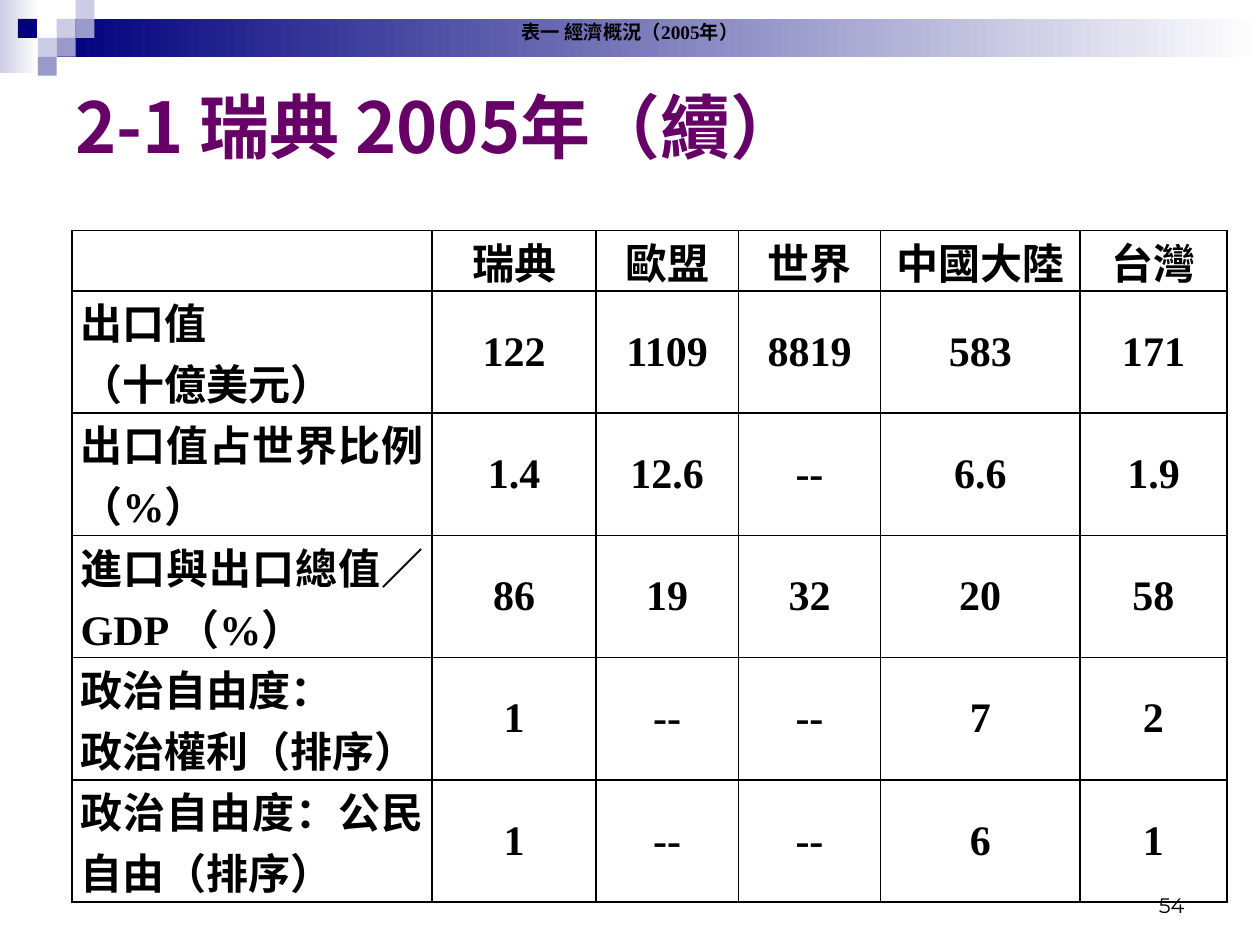
"""Build the slide on Sweden's 2005 economic profile."""
import dataclasses
import typing

import lxml.etree
import pptx
import pptx.dml.color
import pptx.enum.shapes
import pptx.enum.text
import pptx.oxml.ns
import pptx.util

ALIGN = pptx.enum.text.PP_ALIGN
ANCHOR = pptx.enum.text.MSO_ANCHOR
WIDTH, HEIGHT, UNIT = 10, 7.5, 0.15
HAN_FONT, LATIN_FONT, NUMBER_FONT = "Noto Sans CJK TC", "Times New Roman", "Montserrat"
NAVY, LILAC, PERIWINKLE, WHITE, BLACK, PURPLE = (
    "00007D", "CCCCE6", "9999CC", "FFFFFF", "000000", "660066")
COLUMN_WIDTHS = (2.86, 1.3, 1.13, 1.13, 1.58, 1.17)
HEADER_HEIGHT, ROW_HEIGHT = 0.48, 0.97
TABLE_ROWS = (
    ("", "瑞典", "歐盟", "世界", "中國大陸", "台灣"),
    ("出口值\n（十億美元）", "122", "1109", "8819", "583", "171"),
    ("出口值占世界比例（%）", "1.4", "12.6", "--", "6.6", "1.9"),
    ("進口與出口總值／GDP （%）", "86", "19", "32", "20", "58"),
    ("政治自由度：\n政治權利（排序）", "1", "--", "--", "7", "2"),
    ("政治自由度：公民自由（排序）", "1", "--", "--", "6", "1"),
)


@dataclasses.dataclass(frozen=True)
class Block:
    """A decorative rectangle in grid units, with one colour or a fade."""
    column: float
    row: float
    columns: float
    rows: float
    colors: tuple[str, ...]


@dataclasses.dataclass(frozen=True)
class Style:
    """The look of a run of text and of its paragraph."""
    size: float
    font: str
    color: str = BLACK
    bold: bool = True
    align: typing.Any = ALIGN.CENTER


@dataclasses.dataclass(frozen=True)
class Label:
    """A text box placed by shares of the slide's size."""
    text: str
    left: float
    top: float
    width: float
    height: float
    style: Style
    anchor: typing.Any = ANCHOR.MIDDLE
    wrap: bool = True


BLOCKS = (
    Block(0, 0, 2, 3.87, (LILAC, WHITE)),
    Block(3, 1, 63.67, 2, (NAVY, WHITE)),
    *(Block(column, row, 1, 1, (color,)) for column, row, color in (
        (3, 1, LILAC), (4, 0, LILAC), (4, 1, PERIWINKLE), (2, 2, LILAC),
        (0.95, 1, NAVY), (3, 2, PERIWINKLE), (2, 3, PERIWINKLE))),
)
TITLE = Label("2-1 瑞典 2005年（續）", 0.05, 0.067, 0.9, 0.132,
              Style(40, HAN_FONT, PURPLE, align=ALIGN.LEFT))
LABELS = (
    Label("54", 0.717, 0.911, 0.233, 0.067,
          Style(12, NUMBER_FONT, bold=False, align=ALIGN.RIGHT), ANCHOR.BOTTOM),
    Label("表一 經濟概況（2005年）", 0, 0, 1, 0.067, Style(11, LATIN_FONT), wrap=False),
)


def rgb(color: str) -> pptx.dml.color.RGBColor:
    """Turn a hex string into a colour."""
    return pptx.dml.color.RGBColor.from_string(color)


def assign(target: typing.Any, values: dict[str, typing.Any]) -> None:
    """Set each named attribute on the target."""
    for name, value in values.items():
        setattr(target, name, value)


def write(frame: typing.Any, text: str, style: Style) -> None:
    """Fill a text frame with one paragraph per line."""
    for index, line in enumerate(text.split("\n")):
        para = frame.add_paragraph() if index else frame.paragraphs[0]
        para.alignment = style.align
        span = para.add_run()
        span.text = line
        assign(span.font, {"size": pptx.util.Pt(style.size), "name": style.font,
                           "bold": style.bold})
        span.font.color.rgb = rgb(style.color)
        east_asian = lxml.etree.SubElement(span.font._element, pptx.oxml.ns.qn("a:ea"))
        east_asian.set("typeface", HAN_FONT)


def draw_block(page: typing.Any, block: Block) -> None:
    """Draw a rectangle with a plain fill or a left-to-right fade."""
    box = page.shapes.add_shape(
        pptx.enum.shapes.MSO_SHAPE.RECTANGLE,
        *(pptx.util.Inches(UNIT * cells)
          for cells in (block.column, block.row, block.columns, block.rows)))
    box.shadow.inherit = False
    box.line.fill.background()
    if len(block.colors) == 1:
        box.fill.solid()
        box.fill.fore_color.rgb = rgb(block.colors[0])
        return
    box.fill.gradient()
    box.fill.gradient_angle = 0
    for position, (stop, color) in enumerate(zip(box.fill.gradient_stops, block.colors)):
        stop.color.rgb = rgb(color)
        stop.position = position


def draw_label(page: typing.Any, label: Label) -> None:
    """Draw a text box."""
    box = page.shapes.add_textbox(
        pptx.util.Inches(label.left * WIDTH), pptx.util.Inches(label.top * HEIGHT),
        pptx.util.Inches(label.width * WIDTH), pptx.util.Inches(label.height * HEIGHT))
    assign(box.text_frame, {"word_wrap": label.wrap, "vertical_anchor": label.anchor})
    write(box.text_frame, label.text, label.style)


def draw_borders(cell: typing.Any) -> None:
    """Give a cell a thin black line on every side."""
    properties = cell._tc.get_or_add_tcPr()
    for index, side in enumerate(("lnL", "lnR", "lnT", "lnB")):
        line = lxml.etree.Element(pptx.oxml.ns.qn(f"a:{side}"), w=str(pptx.util.Pt(1)))
        fill = lxml.etree.SubElement(line, pptx.oxml.ns.qn("a:solidFill"))
        lxml.etree.SubElement(fill, pptx.oxml.ns.qn("a:srgbClr"), val=BLACK)
        properties.insert(index, line)


def draw_table(page: typing.Any) -> None:
    """Draw the table of trade and freedom figures."""
    heights = (HEADER_HEIGHT, *[ROW_HEIGHT] * (len(TABLE_ROWS) - 1))
    table = page.shapes.add_table(
        len(heights), len(COLUMN_WIDTHS), pptx.util.Inches(0.57), pptx.util.Inches(1.83),
        pptx.util.Inches(sum(COLUMN_WIDTHS)), pptx.util.Inches(sum(heights))).table
    assign(table, {"first_row": False, "horz_banding": False})
    for column, width in zip(table.columns, COLUMN_WIDTHS):
        column.width = pptx.util.Inches(width)
    margin = pptx.util.Inches(0.07)
    for row_index, (values, height) in enumerate(zip(TABLE_ROWS, heights)):
        table.rows[row_index].height = pptx.util.Inches(height)
        for column_index, text in enumerate(values):
            cell = table.cell(row_index, column_index)
            is_figure = row_index and column_index
            assign(cell, {"margin_left": margin, "margin_right": margin,
                          "margin_top": 0, "margin_bottom": 0,
                          "vertical_anchor": ANCHOR.MIDDLE if is_figure else ANCHOR.TOP})
            cell.fill.background()
            draw_borders(cell)
            if text:
                align = ALIGN.CENTER if column_index else ALIGN.JUSTIFY
                write(cell.text_frame, text, Style(24, LATIN_FONT, align=align))


def main() -> None:
    """Build and save the deck."""
    deck = pptx.Presentation()
    assign(deck, {"slide_width": pptx.util.Inches(WIDTH),
                  "slide_height": pptx.util.Inches(HEIGHT)})
    page = deck.slides.add_slide(deck.slide_layouts[6])
    for block in BLOCKS:
        draw_block(page, block)
    draw_label(page, TITLE)
    draw_table(page)
    for label in LABELS:
        draw_label(page, label)
    deck.save("out.pptx")


if __name__ == "__main__":
    main()
